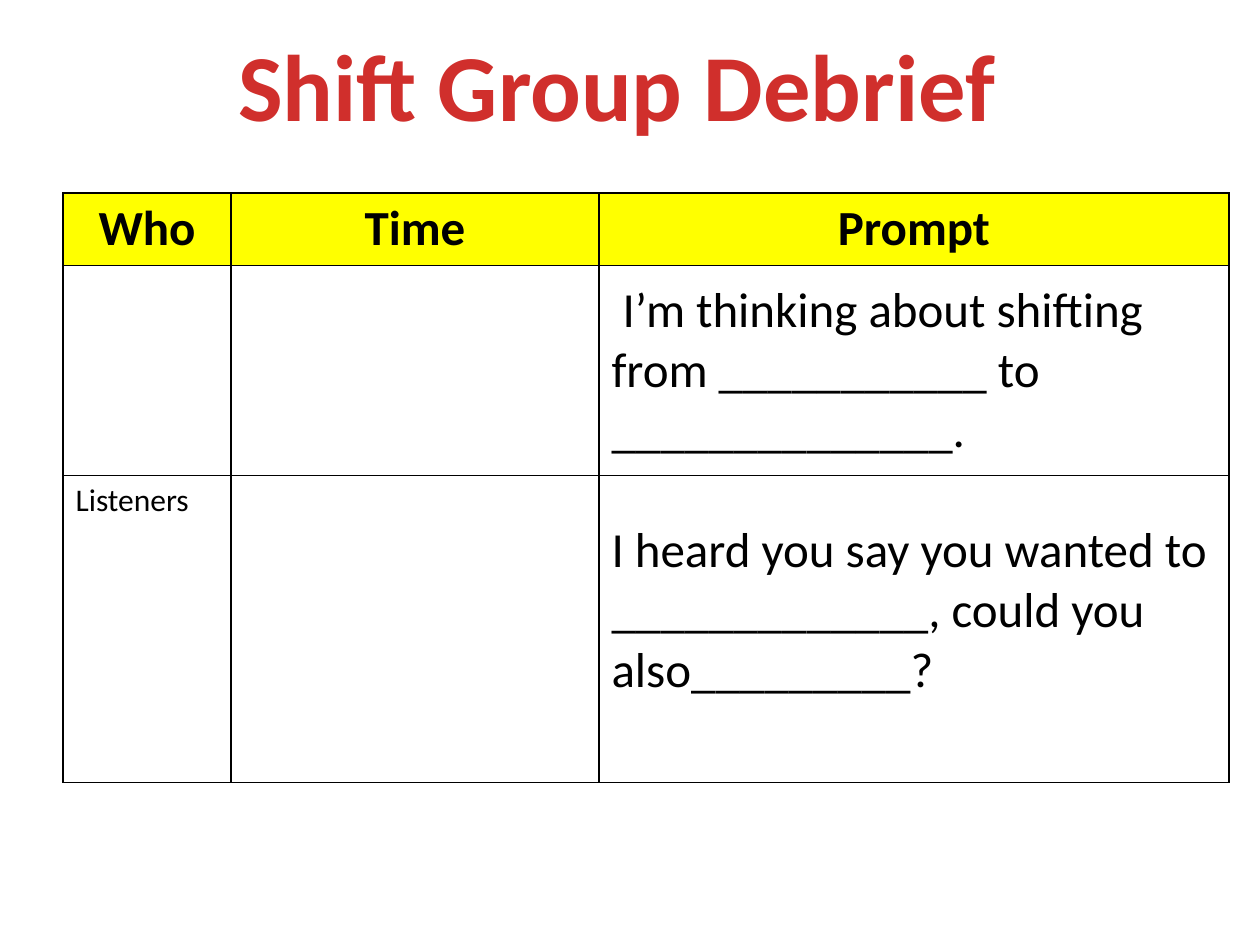
import pptx
import pptx.dml.color
import pptx.enum.text
import pptx.oxml
import pptx.oxml.ns
import pptx.util

PX = 914400 // 126
RED = pptx.dml.color.RGBColor(0xD0, 0x2F, 0x2C)
BLACK = pptx.dml.color.RGBColor(0, 0, 0)
YELLOW = pptx.dml.color.RGBColor(0xFF, 0xFF, 0)
COLUMN_WIDTHS = [168, 368, 630]
ROW_HEIGHTS = [72, 210, 307]
ROWS = [
    ["Who", "Time", "Prompt"],
    ["", "", " I’m thinking about shifting from ___________ to ______________."],
    ["Listeners", "", "I heard you say you wanted to _____________, could you also_________?"],
]


def style_paragraph(para, size, color, bold):
    para.font.name = "Calibri"
    para.font.size = pptx.util.Pt(size)
    para.font.color.rgb = color
    para.font.bold = bold


def add_borders(cell):
    properties = cell._tc.get_or_add_tcPr()
    for position, side in enumerate(["lnL", "lnR", "lnT", "lnB"]):
        border = pptx.oxml.parse_xml(
            f'<a:{side} {pptx.oxml.ns.nsdecls("a")} w="12700"><a:solidFill>'
            f'<a:srgbClr val="{BLACK}"/></a:solidFill></a:{side}>'
        )
        properties.insert(position, border)


deck = pptx.Presentation()
deck.slide_width = 1260 * PX
deck.slide_height = 945 * PX
page = deck.slides.add_slide(deck.slide_layouts[6])

frame = page.shapes.add_table(
    3, 3, 63 * PX, 193 * PX, sum(COLUMN_WIDTHS) * PX, sum(ROW_HEIGHTS) * PX
)
table = frame.table
for column, width in zip(table.columns, COLUMN_WIDTHS):
    column.width = width * PX
for row, height in zip(table.rows, ROW_HEIGHTS):
    row.height = height * PX

for row_index, texts in enumerate(ROWS):
    is_header = row_index == 0
    for column_index, text in enumerate(texts):
        is_prompt = column_index == 2
        cell = table.cell(row_index, column_index)
        cell.text = text
        para = cell.text_frame.paragraphs[0]
        style_paragraph(para, 28 if is_header or is_prompt else 18, BLACK, is_header)
        if is_header or is_prompt:
            cell.vertical_anchor = pptx.enum.text.MSO_ANCHOR.MIDDLE
        if is_header:
            para.alignment = pptx.enum.text.PP_ALIGN.CENTER
            cell.fill.solid()
            cell.fill.fore_color.rgb = YELLOW
        else:
            cell.fill.background()
        add_borders(cell)
table.cell(2, 2).margin_bottom = 43 * PX

title = page.shapes.add_textbox(220 * PX, 21 * PX, 794 * PX, 127 * PX)
title.text_frame.word_wrap = False
title.text_frame.text = "Shift Group Debrief"
para = title.text_frame.paragraphs[0]
para.alignment = pptx.enum.text.PP_ALIGN.CENTER
style_paragraph(para, 54, RED, True)

deck.save("out.pptx")
